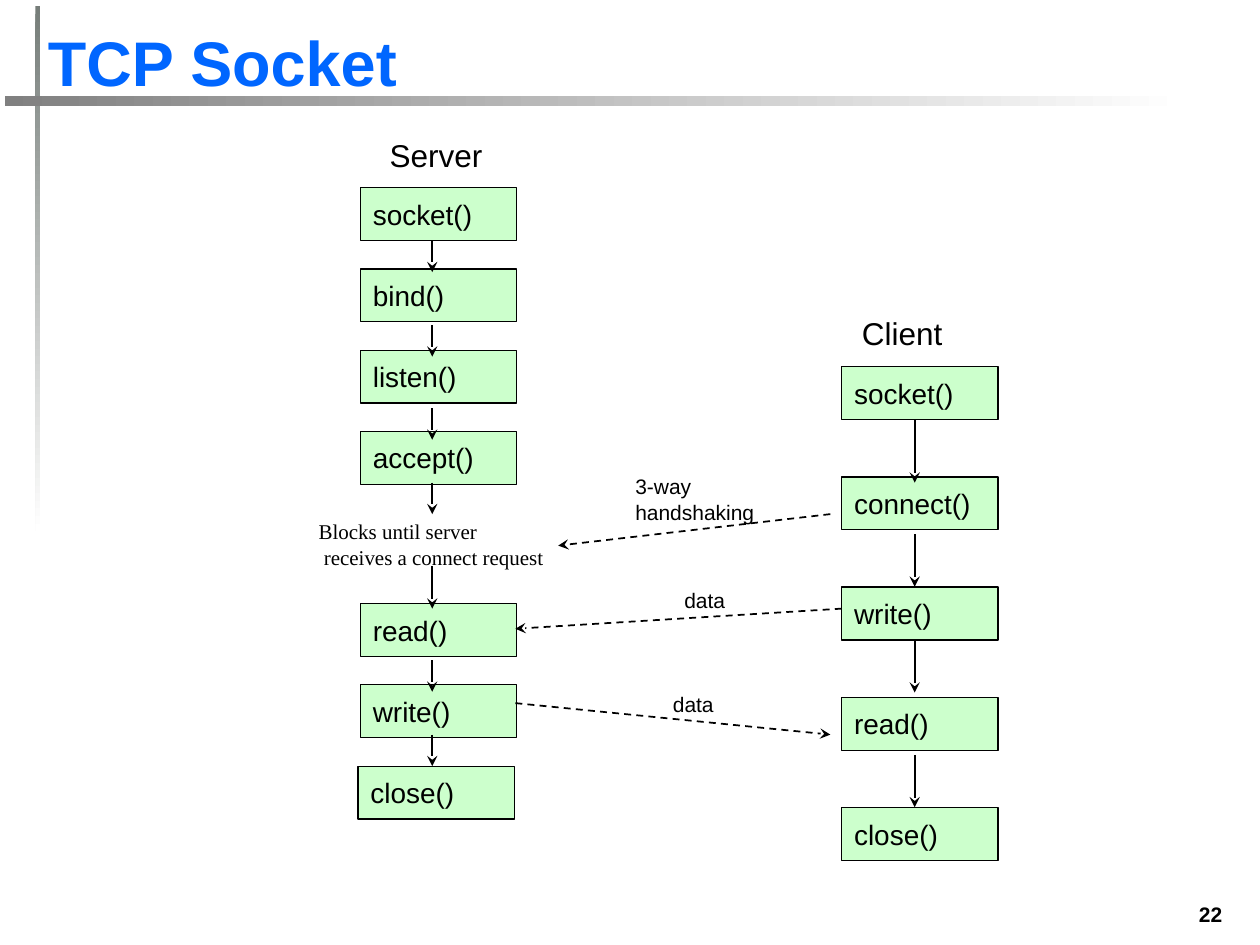
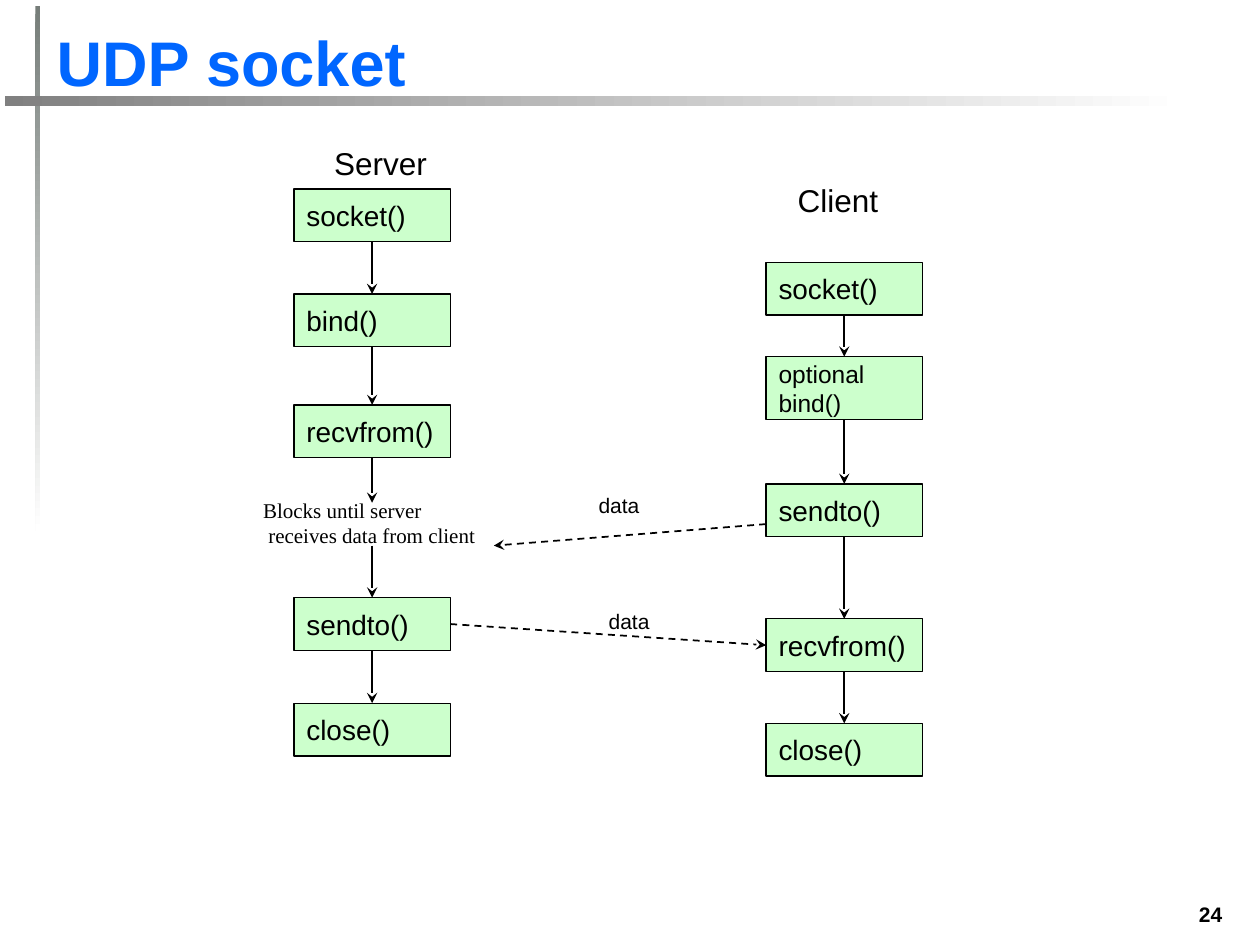
from collections import namedtuple
from dataclasses import dataclass

from lxml import etree
from pptx import Presentation
from pptx.dml.color import RGBColor
from pptx.enum.dml import MSO_LINE
from pptx.enum.shapes import MSO_CONNECTOR, MSO_SHAPE
from pptx.enum.text import MSO_ANCHOR, MSO_AUTO_SIZE, PP_ALIGN
from pptx.oxml.ns import qn
from pptx.util import Pt

RECT, STRAIGHT, DASH = MSO_SHAPE.RECTANGLE, MSO_CONNECTOR.STRAIGHT, MSO_LINE.DASH
LEFT, RIGHT = PP_ALIGN.LEFT, PP_ALIGN.RIGHT
TOP, MIDDLE, BOTTOM = MSO_ANCHOR.TOP, MSO_ANCHOR.MIDDLE, MSO_ANCHOR.BOTTOM
NO_AUTOFIT = MSO_AUTO_SIZE.NONE
TOP_SIDE, LEFT_SIDE, BOTTOM_SIDE, RIGHT_SIDE = range(4)
TITLE_ONLY = 5

Box = namedtuple("Box", "left top width height")


@dataclass(frozen=True)
class Theme:
    font: str = "Arial"
    note_font: str = "Times New Roman"
    black: str = "000000"
    white: str = "FFFFFF"
    title: str = "0066FF"
    call_fill: str = "CCFFCC"
    upright_band: str = "767D79"
    level_band: str = "808080"
    title_size: int = 36
    heading_size: int = 18
    call_size: int = 16
    small_call_size: int = 14
    label_size: int = 12


THEME = Theme()
CALL_WIDTH, CALL_HEIGHT = 89.3, 30.2


def rgb(colour):
    return RGBColor.from_string(colour)


def points(box):
    return [Pt(v) for v in box]


def write(sp, text, size, font=THEME.font, colour=THEME.black, bold=False,
          align=LEFT, anchor=TOP, wrap=False, inset=None):
    tf = sp.text_frame
    tf.auto_size = NO_AUTOFIT
    tf.word_wrap = wrap
    tf.vertical_anchor = anchor
    if inset is not None:
        tf.margin_left = tf.margin_right = tf.margin_top = tf.margin_bottom = Pt(inset)
    p = tf.paragraphs[0]
    p.text = text
    p.alignment = align
    for r in p.runs:
        r.font.name, r.font.size, r.font.bold = font, Pt(size), bold
        r.font.color.rgb = rgb(colour)


def label(slide, box, text, size=THEME.label_size, **style):
    write(slide.shapes.add_textbox(*points(box)), text, size, **style)


# Frame shared by both slides
def band(slide, box, colour, angle):
    sp = slide.shapes.add_shape(RECT, *points(box))
    sp.shadow.inherit = False
    sp.line.fill.background()
    sp.fill.gradient()
    sp.fill.gradient_angle = angle
    for stop, shade in zip(sp.fill.gradient_stops, (colour, THEME.white)):
        stop.color.rgb = rgb(shade)


def add_framed_slide(prs, title, title_box, number):
    slide = prs.slides.add_slide(prs.slide_layouts[TITLE_ONLY])
    band(slide, Box(20.2, 3.6, 2.9, 300), THEME.upright_band, 270)
    band(slide, Box(2.9, 54.7, 674.6, 5.8), THEME.level_band, 0)
    sp = slide.shapes.title
    sp.left, sp.top, sp.width, sp.height = points(title_box)
    write(sp, title, THEME.title_size, colour=THEME.title, bold=True,
          anchor=BOTTOM, wrap=True)
    label(slide, Box(660.2, 511.9, 45.4, 21.6), number, bold=True,
          align=RIGHT, wrap=True)
    return slide


# Arrows; an end is a point or a (shape, side) pair
def arrow(slide, start, end, dashed=False):
    glued_start, glued_end = hasattr(start[0], "shape_id"), hasattr(end[0], "shape_id")
    begin_at = (0, 0) if glued_start else points(start)
    end_at = (0, 0) if glued_end else points(end)
    line = slide.shapes.add_connector(STRAIGHT, *begin_at, *end_at)
    if glued_start:
        line.begin_connect(*start)
    if glued_end:
        line.end_connect(*end)
    line.line.color.rgb = rgb(THEME.black)
    line.line.width = Pt(1)
    if dashed:
        line.line.dash_style = DASH
    etree.SubElement(line.line._get_or_add_ln(), qn("a:tailEnd"), type="stealth")
    etree.SubElement(line._element.spPr, qn("a:effectLst"))


def down_arrows(slide, x, spans):
    for top, length in spans:
        arrow(slide, (x, top), (x, top + length))


# One call of the socket interface
def call_box(slide, left, top, text, height=CALL_HEIGHT, size=THEME.call_size):
    sp = slide.shapes.add_shape(RECT, *points((left, top, CALL_WIDTH, height)))
    sp.shadow.inherit = False
    sp.fill.solid()
    sp.fill.fore_color.rgb = rgb(THEME.call_fill)
    sp.line.color.rgb = rgb(THEME.black)
    sp.line.width = Pt(0.75)
    write(sp, text, size, anchor=MIDDLE)
    return sp


# A headed column of calls; each call is (offset from top, text, options)
def call_column(slide, left, top, heading, heading_dx, heading_dy, calls):
    label(slide, Box(left + heading_dx, top + heading_dy, 56.9, 21.6), heading,
          THEME.heading_size, inset=0)
    return [call_box(slide, left, top + dy, text, **options)
            for dy, text, options in calls]


def evenly(names, step, start=0):
    return [(start + i * step, name, {}) for i, name in enumerate(names)]


def blocking_note(slide, box, text):
    label(slide, box, text, font=THEME.note_font)


# A dashed arrow falling across its box, with a label offset from the corner
def message(slide, box, text, dx, dy, leftward=True):
    start, end = (box.left, box.top), (box.left + box.width, box.top + box.height)
    if leftward:
        start, end = (end[0], start[1]), (start[0], end[1])
    arrow(slide, start, end, dashed=True)
    message_label(slide, box.left + dx, box.top + dy, text)


def message_label(slide, left, top, text):
    label(slide, Box(left, top, 68.4 if "\n" in text else 25.2, 14.4), text, inset=0)


def tcp_slide(prs):
    slide = add_framed_slide(prs, "TCP Socket", Box(20.2, 9.4, 604, 51), "22")
    left, top, step = 206, 107.3, 46.4

    # Server, with a wait between accept() and read()
    before = evenly(["socket()", "bind()", "listen()", "accept()"], step)
    after = evenly(["read()", "write()"], step, start=237.6)
    call_column(slide, left, top, "Server", 16.6, -29.5, before + after)
    call_box(slide, left - 1.4, top + 330.5, "close()")
    blocking_note(slide, Box(175, 293, 152, 36),
                  "Blocks until server\n receives a connect request")
    down_arrows(slide, left + 41, [(137.5, 18), (185.8, 18), (233.3, 18), (275.8, 18),
                                   (323.3, 24.5), (377.3, 18), (419.8, 18)])

    # Client
    call_column(slide, 481, 209.5, "Client", 11.5, -30.2,
                evenly(["socket()", "connect()", "write()", "read()", "close()"], 63))
    down_arrows(slide, 522.7, [(239.8, 36), (305.3, 30), (365.8, 30), (431.3, 30)])

    # Messages between the two
    message(slide, Box(319, 293.8, 155.5, 18), "3-way\nhandshaking", 44, -23)
    message(slide, Box(294.5, 347.8, 186.5, 11.5), "data", 96.5, -12.3)
    message(slide, Box(294.5, 401.8, 180, 18), "data", 90, -6.5, leftward=False)


def udp_slide(prs):
    slide = add_framed_slide(prs, "UDP socket", Box(25.2, 9.4, 598.3, 51), "24")

    # Server, with a wait between recvfrom() and sendto()
    left, top = 168, 108
    server = call_column(slide, left, top, "Server", 23, -25.9, [
        (0, "socket()", {}), (60, "bind()", {}), (123.4, "recvfrom()", {}),
        (233.5, "sendto()", {}), (293.8, "close()", {})])
    sock, bind, receive, send, close = server
    blocking_note(slide, Box(143.3, 280.8, 144, 36),
                  "Blocks until server\n receives data from client")
    middle = left + CALL_WIDTH / 2
    arrow(slide, (receive, BOTTOM_SIDE), (middle, 287.3))
    arrow(slide, (middle, 311.8), (send, TOP_SIDE))

    # Client
    client = call_column(slide, 437.8, 149.8, "Client", 18, -46.1, [
        (0, "socket()", {}),
        (54, "optional\nbind()", {"height": 36, "size": THEME.small_call_size}),
        (126.7, "sendto()", {}), (203.8, "recvfrom()", {}), (263.5, "close()", {})])

    # Steps that follow directly on one another
    for upper, lower in [(sock, bind), (bind, receive), (send, close),
                         *zip(client, client[1:])]:
        arrow(slide, (upper, BOTTOM_SIDE), (lower, TOP_SIDE))

    # Messages between the two
    message(slide, Box(282.2, 299.5, 155.6, 12.3), "data", 59.8, -18)
    arrow(slide, (send, RIGHT_SIDE), (client[3], LEFT_SIDE), dashed=True)
    message_label(slide, 347.8, 347.8, "data")


def main():
    prs = Presentation()
    prs.slide_width, prs.slide_height = Pt(720), Pt(540)
    tcp_slide(prs)
    udp_slide(prs)
    prs.save("out.pptx")


if __name__ == "__main__":
    main()
